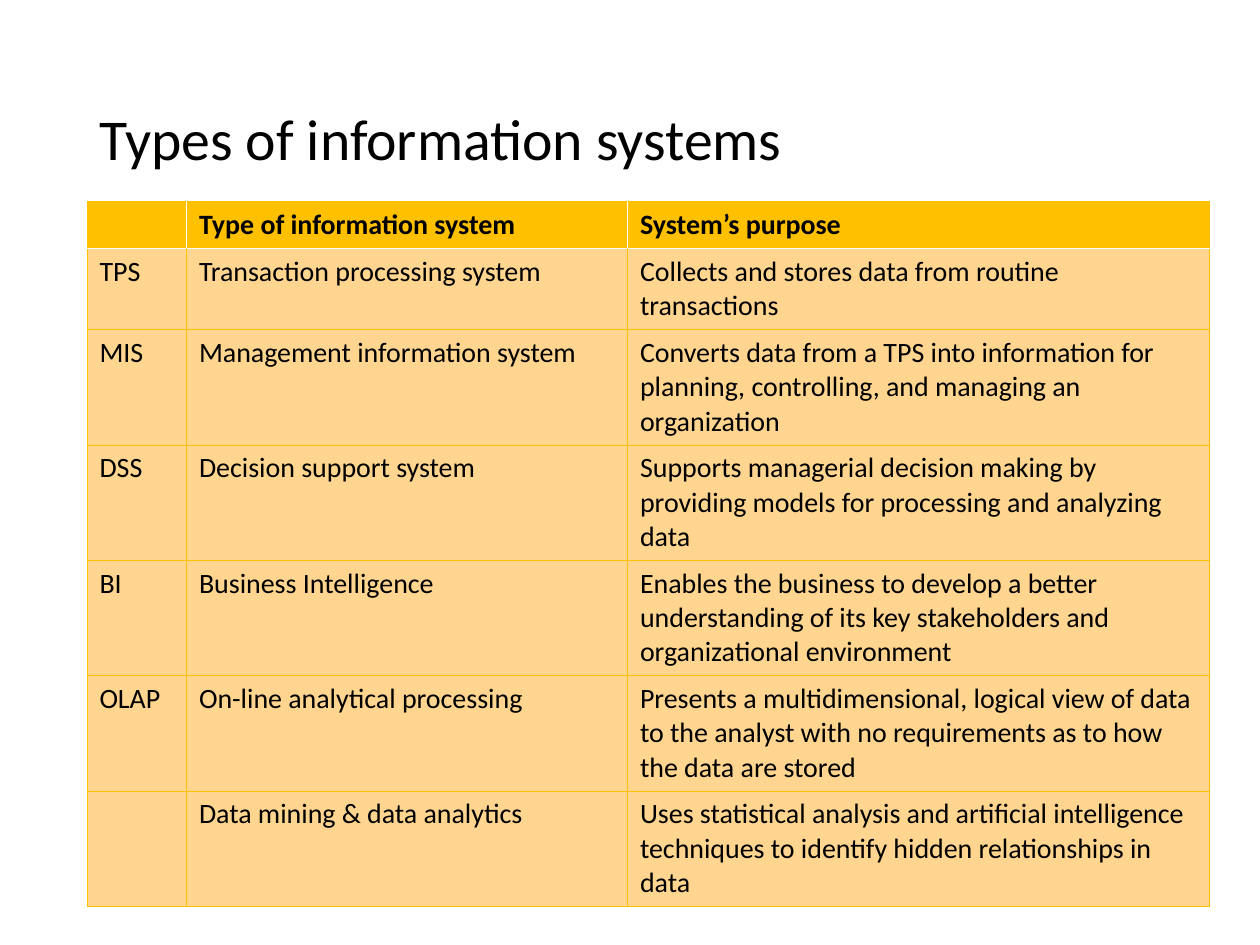
from lxml import etree
from pptx import Presentation
from pptx.dml.color import RGBColor
from pptx.enum.text import MSO_ANCHOR
from pptx.oxml.ns import qn
from pptx.util import Inches, Pt

MIDDLE = MSO_ANCHOR.MIDDLE

TITLE = "Types of information systems"
ROWS = [
    ("", "Type of information system", "System’s purpose"),
    ("TPS", "Transaction processing system",
     "Collects and stores data from routine transactions"),
    ("MIS", "Management information system",
     "Converts data from a TPS into information for planning, controlling, "
     "and managing an organization"),
    ("DSS", "Decision support system",
     "Supports managerial decision making by providing models for processing "
     "and analyzing data"),
    ("BI", "Business Intelligence",
     "Enables the business to develop a better understanding of its key "
     "stakeholders and organizational environment"),
    ("OLAP", "On-line analytical processing",
     "Presents a multidimensional, logical view of data to the analyst with "
     "no requirements as to how the data are stored"),
    ("", "Data mining & data analytics",
     "Uses statistical analysis and artificial intelligence techniques to "
     "identify hidden relationships in data"),
]
COL_WIDTHS = [0.79, 3.5, 4.62]
ROW_HEIGHT = 0.33
THEME = {"font": "Calibri", "text": "000000", "header": "FFC000",
         "body": "FFD58F", "rule": "FFFFFF", "title_size": 33, "cell_size": 16}


def add_run(p, text, size, bold=False):
    r = p.add_run()
    r.text = text
    r.font.name = THEME["font"]
    r.font.size = Pt(size)
    r.font.bold = bold
    r.font.color.rgb = RGBColor.from_string(THEME["text"])


def add_border(cell, side, color, width):
    ln = etree.SubElement(cell._tc.get_or_add_tcPr(), qn(f"a:ln{side}"),
                          w=str(Pt(width)))
    fill = etree.SubElement(ln, qn("a:solidFill"))
    etree.SubElement(fill, qn("a:srgbClr"), val=color)


def cell_borders(row, col):
    line, rule = (THEME["header"], 0.5), (THEME["rule"], 1)
    borders = {side: line for side in "LRTB"}
    if row == 0:
        borders["B"] = rule
        if col > 0:
            del borders["L"]
        if col < len(COL_WIDTHS) - 1:
            del borders["R"]
    elif row == 1:
        borders["T"] = rule
    return borders


def fill_cell(cell, text, row, col):
    for side, (color, width) in cell_borders(row, col).items():
        add_border(cell, side, color, width)
    cell.fill.solid()
    cell.fill.fore_color.rgb = RGBColor.from_string(
        THEME["header" if row == 0 else "body"])
    p = cell.text_frame.paragraphs[0]
    p.space_before = p.space_after = Pt(3)
    if text:
        add_run(p, text, THEME["cell_size"], bold=row == 0)
    else:
        etree.SubElement(p._p, qn("a:endParaRPr"),
                         sz=str(THEME["cell_size"] * 100))


def add_title(s):
    sp = s.shapes.title
    sp.left, sp.top = Inches(0.69), Inches(0.4)
    sp.width, sp.height = Inches(8.62), Inches(1.45)
    tf = sp.text_frame
    tf.vertical_anchor = MIDDLE
    p = tf.paragraphs[0]
    p.alignment = 1
    p.line_spacing = 0.9
    add_run(p, TITLE, THEME["title_size"])


def add_systems_table(s):
    table = s.shapes.add_table(
        len(ROWS), len(COL_WIDTHS), Inches(0.69), Inches(1.6),
        Inches(sum(COL_WIDTHS)), Inches(ROW_HEIGHT * len(ROWS))).table
    for column, width in zip(table.columns, COL_WIDTHS):
        column.width = Inches(width)
    for i, texts in enumerate(ROWS):
        table.rows[i].height = Inches(ROW_HEIGHT)
        for j, text in enumerate(texts):
            fill_cell(table.cell(i, j), text, i, j)


def main():
    prs = Presentation()
    prs.slide_width, prs.slide_height = Inches(10), Inches(7.5)
    s = prs.slides.add_slide(prs.slide_layouts[5])
    add_title(s)
    add_systems_table(s)
    prs.save("out.pptx")


if __name__ == "__main__":
    main()
